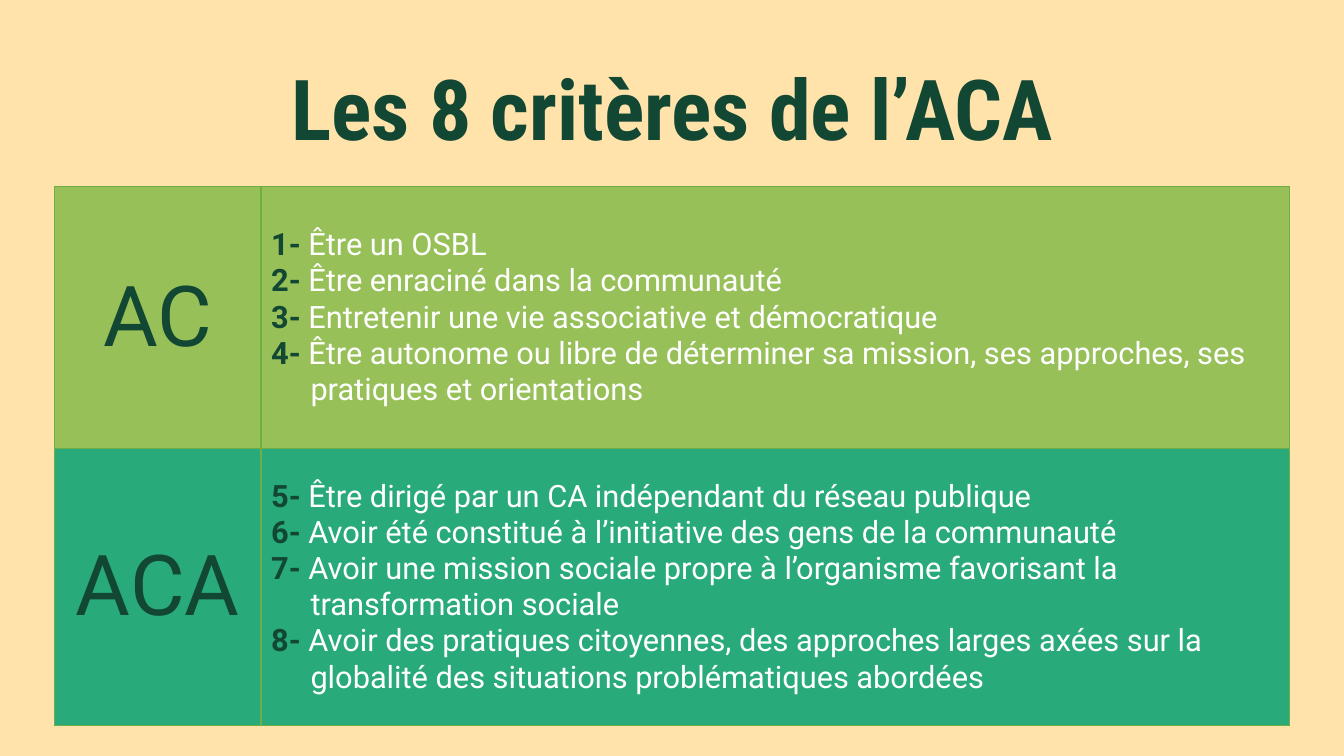
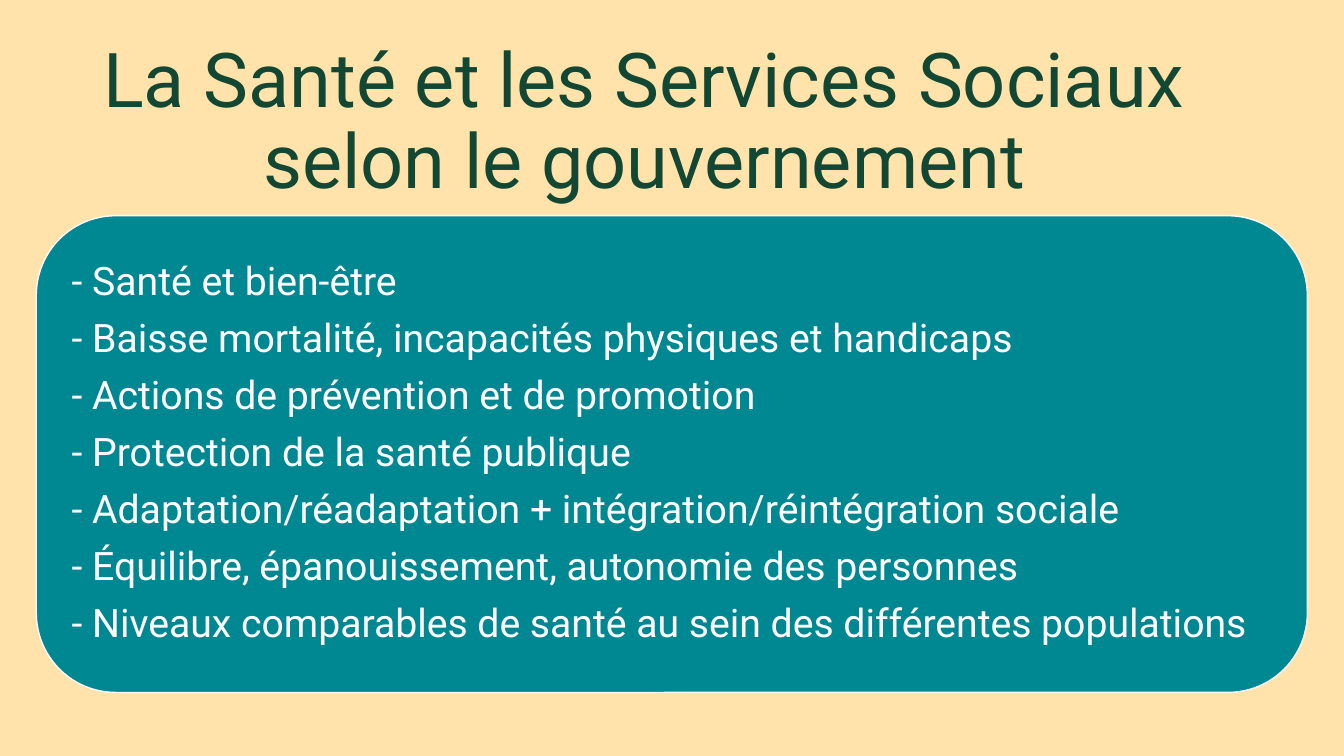
import pptx
import pptx.util
import pptx.dml.color
import pptx.enum.shapes
import pptx.enum.text
import pptx.oxml
import pptx.oxml.ns

RGBColor = pptx.dml.color.RGBColor
ALIGN = pptx.enum.text.PP_ALIGN
ANCHOR = pptx.enum.text.MSO_ANCHOR

SAND = RGBColor(0xFF, 0xE3, 0xAB)
FOREST = RGBColor(0x12, 0x47, 0x33)
WHITE = RGBColor(0xFF, 0xFF, 0xFF)
LIME = RGBColor(0x97, 0xC0, 0x59)
EMERALD = RGBColor(0x28, 0xAA, 0x7A)
TEAL = RGBColor(0x00, 0x88, 0x92)
BORDER = RGBColor(0x70, 0xAD, 0x47)

BODY_FONT = "Roboto"
HEADING_FONT = "Roboto Condensed"

# Slide grid: square cells, ten to the inch
CELL = pptx.util.Inches(0.1)
SLIDE_COLUMNS, SLIDE_ROWS = 133.33, 75
TITLE_COLUMNS, TITLE_ROWS = 115, 14.5

BIG_LABEL = dict(name=BODY_FONT, size=pptx.util.Pt(60))
NUMBER = dict(name=BODY_FONT, size=pptx.util.Pt(22), bold=True)
CRITERION = dict(NUMBER, bold=False)
BULLET = dict(name=BODY_FONT, size=pptx.util.Pt(28))

CRITERIA = [
    ("AC", LIME, 26, [
        "Être un OSBL",
        "Être enraciné dans la communauté",
        "Entretenir une vie associative et démocratique",
        "Être autonome ou libre de déterminer sa mission, ses approches, "
        "ses pratiques et orientations",
    ]),
    ("ACA", EMERALD, 27.5, [
        "Être dirigé par un CA indépendant du réseau publique",
        "Avoir été constitué à l’initiative des gens de la communauté",
        "Avoir une mission sociale propre à l’organisme favorisant la "
        "transformation sociale",
        "Avoir des pratiques citoyennes, des approches larges axées sur la "
        "globalité des situations problématiques abordées",
    ]),
]

GOVERNMENT_AIMS = [
    "Santé et bien-être",
    "Baisse mortalité, incapacités physiques et handicaps",
    "Actions de prévention et de promotion",
    "Protection de la santé publique",
    "Adaptation/réadaptation + intégration/réintégration sociale",
    "Équilibre, épanouissement, autonomie des personnes",
    "Niveaux comparables de santé au sein des différentes populations",
]


def grid(*cells):
    return [round(count * CELL) for count in cells]


def apply(target, formats):
    for attribute, value in formats.items():
        setattr(target, attribute, value)


def add_run(paragraph, text, colour, formats):
    run = paragraph.add_run()
    run.text = text
    apply(run.font, formats)
    run.font.color.rgb = colour


def paragraphs(frame, count):
    """Yield the frame's first paragraph, then new ones."""
    yield frame.paragraphs[0]
    for _ in range(count - 1):
        yield frame.add_paragraph()


def add_titled_slide(deck, text, left, top, formats):
    slide = deck.slides.add_slide(deck.slide_layouts[5])
    title = slide.shapes.title
    apply(title, dict(zip(("left", "top", "width", "height"),
                          grid(left, top, TITLE_COLUMNS, TITLE_ROWS))))
    apply(title.text_frame, dict(
        word_wrap=True, vertical_anchor=ANCHOR.MIDDLE,
        auto_size=pptx.enum.text.MSO_AUTO_SIZE.NONE))
    heading = title.text_frame.paragraphs[0]
    apply(heading, dict(alignment=ALIGN.CENTER, line_spacing=0.9))
    add_run(heading, text, FOREST, formats)
    return slide


def style_cell(cell, fill):
    cell.vertical_anchor = ANCHOR.MIDDLE
    # Borders come before the fill in the cell's properties
    properties = cell._tc.get_or_add_tcPr()
    for side in ("lnL", "lnR", "lnT", "lnB"):
        properties.append(pptx.oxml.parse_xml(
            f'<a:{side} {pptx.oxml.ns.nsdecls("a")} w="{pptx.util.Pt(1)}">'
            f'<a:solidFill><a:srgbClr val="{BORDER}"/></a:solidFill>'
            f'</a:{side}>'))
    cell.fill.solid()
    cell.fill.fore_color.rgb = fill


def add_criteria_table(slide):
    column_widths = (20.5, 102)
    height = sum(rows for _, _, rows, _ in CRITERIA)
    table = slide.shapes.add_table(
        len(CRITERIA), 2, *grid(5.4, 18.5, sum(column_widths), height)).table
    apply(table, dict(first_row=False, horz_banding=False))
    for column, width in zip(table.columns, grid(*column_widths)):
        column.width = width

    number = 0
    for index, (label, fill, rows, criteria) in enumerate(CRITERIA):
        table.rows[index].height = grid(rows)[0]
        label_cell, criteria_cell = table.rows[index].cells
        for cell in (label_cell, criteria_cell):
            style_cell(cell, fill)

        label_line = label_cell.text_frame.paragraphs[0]
        label_line.alignment = ALIGN.CENTER
        add_run(label_line, label, FOREST, BIG_LABEL)

        lines = paragraphs(criteria_cell.text_frame, len(criteria))
        for line, criterion in zip(lines, criteria):
            number += 1
            hanging = pptx.util.Inches(0.39)
            indents = line._p.get_or_add_pPr()
            indents.set("marL", str(hanging))
            indents.set("indent", str(-hanging))
            add_run(line, f"{number}- ", FOREST, NUMBER)
            add_run(line, criterion, WHITE, CRITERION)


def add_aims_panel(slide):
    panel = slide.shapes.add_shape(
        pptx.enum.shapes.MSO_SHAPE.ROUNDED_RECTANGLE,
        *grid(3.6, 21.4, 126.1, 47.3))
    panel.shadow.inherit = False
    panel.fill.solid()
    panel.fill.fore_color.rgb = TEAL
    panel.line.color.rgb = WHITE
    panel.line.width = pptx.util.Pt(1)

    frame = panel.text_frame
    apply(frame, dict(word_wrap=True, vertical_anchor=ANCHOR.MIDDLE))
    apply(frame, dict.fromkeys(
        ("margin_left", "margin_top", "margin_right", "margin_bottom"),
        pptx.util.Inches(0.12)))
    lines = paragraphs(frame, len(GOVERNMENT_AIMS))
    for line, aim in zip(lines, GOVERNMENT_AIMS):
        apply(line, dict(alignment=ALIGN.LEFT, line_spacing=0.9,
                         space_after=pptx.util.Pt(10.5)))
        add_run(line, f"- {aim}", WHITE, BULLET)


def main():
    deck = pptx.Presentation()
    deck.slide_width, deck.slide_height = grid(SLIDE_COLUMNS, SLIDE_ROWS)

    # Shared background
    background = deck.slide_master.background.fill
    background.solid()
    background.fore_color.rgb = SAND

    # The eight criteria
    criteria_slide = add_titled_slide(
        deck, "Les 8 critères de l’ACA", 9.2, 4,
        dict(name=HEADING_FONT, size=pptx.util.Pt(60), bold=True))
    add_criteria_table(criteria_slide)

    # The government's view of health and social services
    aims_slide = add_titled_slide(
        deck, "La Santé et les Services Sociaux selon le gouvernement",
        6.4, 5, dict(name=BODY_FONT, size=pptx.util.Pt(54)))
    add_aims_panel(aims_slide)

    deck.save("out.pptx")


if __name__ == "__main__":
    main()
